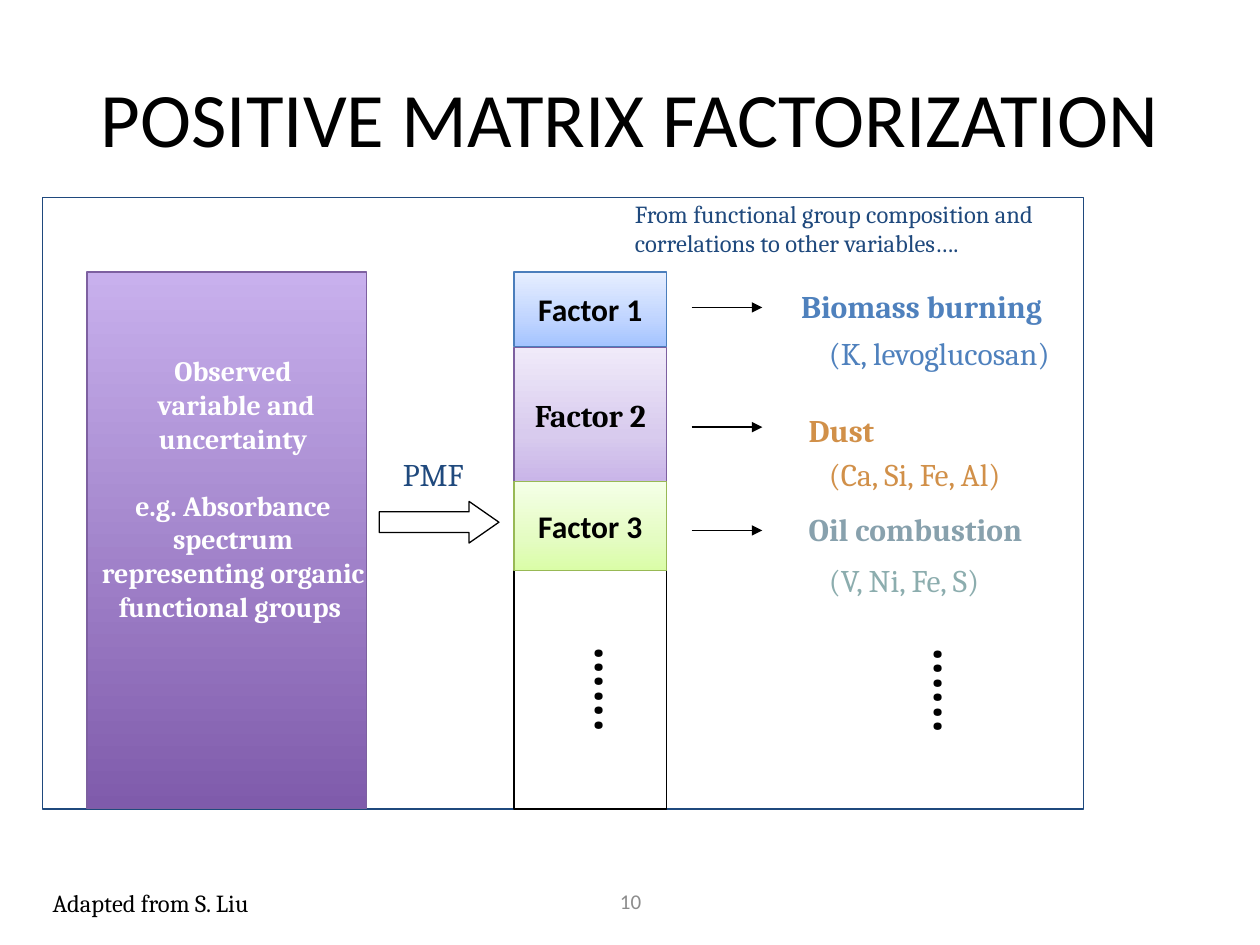
from copy import deepcopy

from pptx import Presentation
from pptx.dml.color import RGBColor
from pptx.enum import shapes, text
from pptx.oxml import ns, xmlchemy
from pptx.util import Inches, Pt

BLACK = RGBColor(0x00, 0x00, 0x00)
WHITE = RGBColor(0xFF, 0xFF, 0xFF)
GRAY = RGBColor(0x8C, 0x8C, 0x8C)
NAVY = RGBColor(0x1F, 0x49, 0x7D)
BLUE = RGBColor(0x4F, 0x81, 0xBD)
ORANGE = RGBColor(0xD1, 0x90, 0x49)
SLATE = RGBColor(0x88, 0xA1, 0xAD)
TEAL = RGBColor(0x8C, 0xAD, 0xAE)
PURPLE = RGBColor(0x7D, 0x60, 0xA0)
SKY_EDGE = RGBColor(0x4B, 0x7E, 0xBC)
LIME_EDGE = RGBColor(0x98, 0xB9, 0x55)
DEEP = [(0, RGBColor(0x7F, 0x5B, 0xAB)), (1, RGBColor(0xC8, 0xB0, 0xED))]
SKY = [(0, RGBColor(0xA4, 0xC4, 0xFF)), (0.35, RGBColor(0xBF, 0xD4, 0xFF)),
       (1, RGBColor(0xE6, 0xEE, 0xFF))]
LILAC = [(0, RGBColor(0xC9, 0xB5, 0xE8)), (0.35, RGBColor(0xD8, 0xCB, 0xEE)),
         (1, RGBColor(0xF0, 0xEA, 0xF9))]
LIME = [(0, RGBColor(0xDA, 0xFD, 0xA7)), (0.35, RGBColor(0xE4, 0xFC, 0xC2)),
        (1, RGBColor(0xF5, 0xFF, 0xE7))]
RECT = shapes.MSO_SHAPE.RECTANGLE
MID = text.MSO_ANCHOR.MIDDLE
MID_ROW = text.PP_ALIGN.CENTER


def shade(fill, stops, props):
    """Fill from bottom to top with the given stops."""
    fill.gradient()
    fill.gradient_angle = 90
    first = props.find(".//" + ns.qn("a:gs"))
    for _ in stops[2:]:
        first.addnext(deepcopy(first))
    for stop, (pos, color) in zip(fill.gradient_stops, stops):
        stop.position = pos
        stop.color.rgb = color


def add_block(slide, at, edge, stops=None, kind=RECT):
    """Add an outlined shape, empty or with a gradient."""
    block = slide.shapes.add_shape(kind, *map(Inches, at))
    block.shadow.inherit = False
    block.line.color.rgb = edge
    block.line.width = Pt(0.75)
    if stops:
        shade(block.fill, stops, block._element.spPr)
    else:
        block.fill.background()
    return block


def write(frame, lines, size, color, font="Cambria", bold=False,
          align=None, anchor=None, wrap=False, gaps=()):
    """Write one paragraph per line, with space before those in gaps."""
    frame.word_wrap = wrap
    frame.vertical_anchor = anchor or text.MSO_ANCHOR.TOP
    for i, line in enumerate(lines):
        para = frame.add_paragraph() if i else frame.paragraphs[0]
        para.alignment = align or text.PP_ALIGN.LEFT
        if i in gaps:
            para.space_before = Pt(size * 1.2)
        run = para.add_run()
        run.text = line
        run.font.size = Pt(size)
        run.font.name = font
        run.font.bold = bold
        run.font.color.rgb = color


def add_label(slide, at, lines, size, color, **style):
    """Add a text box."""
    box = slide.shapes.add_textbox(*map(Inches, at))
    write(box.text_frame, lines, size, color, **style)
    return box


def add_dots(slide, left, top):
    """Add a vertical row of dots."""
    box = add_label(slide, (left, top, 0.87, 1.03), ["......"], 40, BLACK)
    box.text_frame._txBody.bodyPr.set("vert", "eaVert")


def add_arrow(slide, y):
    """Add a thin arrow from a factor to its source."""
    line = slide.shapes.add_connector(
        shapes.MSO_CONNECTOR.STRAIGHT, Inches(5.49), Inches(y), Inches(6.05), Inches(y))
    line.line.color.rgb = BLACK
    line.line.width = Pt(0.75)
    tail = xmlchemy.OxmlElement("a:tailEnd")
    tail.set("type", "triangle")
    line.line._get_or_add_ln().append(tail)
    line._element.spPr.append(xmlchemy.OxmlElement("a:effectLst"))


def add_input(slide):
    """Add the observed data and the arrow that leads to the factors."""
    add_block(slide, (0.69, 2.16, 2.22, 4.26), PURPLE, DEEP)
    add_label(slide, (0.69, 2.76, 2.32, 2.51),
              ["Observed", " variable and uncertainty",
               "e.g. Absorbance spectrum representing organic functional groups "],
              16, WHITE, bold=True, align=MID_ROW, wrap=True, gaps=(2,))
    arrow = add_block(slide, (3.01, 3.98, 0.95, 0.33), BLACK,
                      kind=shapes.MSO_SHAPE.RIGHT_ARROW)
    arrow.adjustments[1] = 0.718
    add_label(slide, (3.1, 3.56, 0.77, 0.4), ["PMF"], 18, NAVY)


def add_factors(slide):
    """Add the stack of factors."""
    add_block(slide, (4.08, 4.53, 1.21, 1.89), BLACK)
    for name, top, high, edge, stops, font in (
            ("Factor 1", 2.16, 0.59, SKY_EDGE, SKY, "Calibri"),
            ("Factor 2", 2.76, 1.06, PURPLE, LILAC, "Cambria"),
            ("Factor 3", 3.82, 0.71, LIME_EDGE, LIME, "Calibri")):
        block = add_block(slide, (4.08, top, 1.21, high), edge, stops)
        write(block.text_frame, [name], 18, BLACK, font=font, bold=True,
              align=MID_ROW, anchor=MID)
    add_dots(slide, 4.46, 5.03)


def add_sources(slide):
    """Add the source and the marker elements of each factor."""
    for name, left, top, tone, marks, low, tint, y in (
            ("Biomass burning", 6.26, 2.23, BLUE, "(K, levoglucosan)", 2.6, BLUE, 2.44),
            ("Dust", 6.32, 3.21, ORANGE, "(Ca, Si, Fe, Al)", 3.56, ORANGE, 3.39),
            ("Oil combustion", 6.32, 4, SLATE, "(V, Ni, Fe, S)", 4.4, TEAL, 4.21)):
        add_arrow(slide, y)
        add_label(slide, (left, top, 2.3, 0.4), [name], 18, tone, bold=True)
        add_label(slide, (6.48, low, 2.17, 0.4), [marks], 18, tint)
    add_dots(slide, 7.15, 5.04)


def main():
    """Build the slide and save it."""
    deck = Presentation()
    deck.slide_width, deck.slide_height = Inches(10), Inches(7.5)
    slide = deck.slides.add_slide(deck.slide_layouts[6])
    add_label(slide, (0.5, 0.3, 9, 1.25), ["POSITIVE MATRIX FACTORIZATION"], 44, BLACK,
              font="Calibri", align=MID_ROW, anchor=MID, wrap=True)
    add_block(slide, (0.34, 1.57, 8.26, 4.85), NAVY)
    add_input(slide)
    add_factors(slide)
    add_sources(slide)
    add_label(slide, (4.94, 1.53, 3.91, 0.57),
              ["From functional group composition and correlations to other variables…."],
              14, NAVY, wrap=True)
    add_label(slide, (0.32, 7, 2.1, 0.34), ["Adapted from S. Liu"], 14, BLACK)
    add_label(slide, (3.42, 6.95, 3.17, 0.4), ["10"], 12, GRAY, font="Calibri",
              align=MID_ROW, anchor=MID, wrap=True)
    deck.save("out.pptx")


if __name__ == "__main__":
    main()
